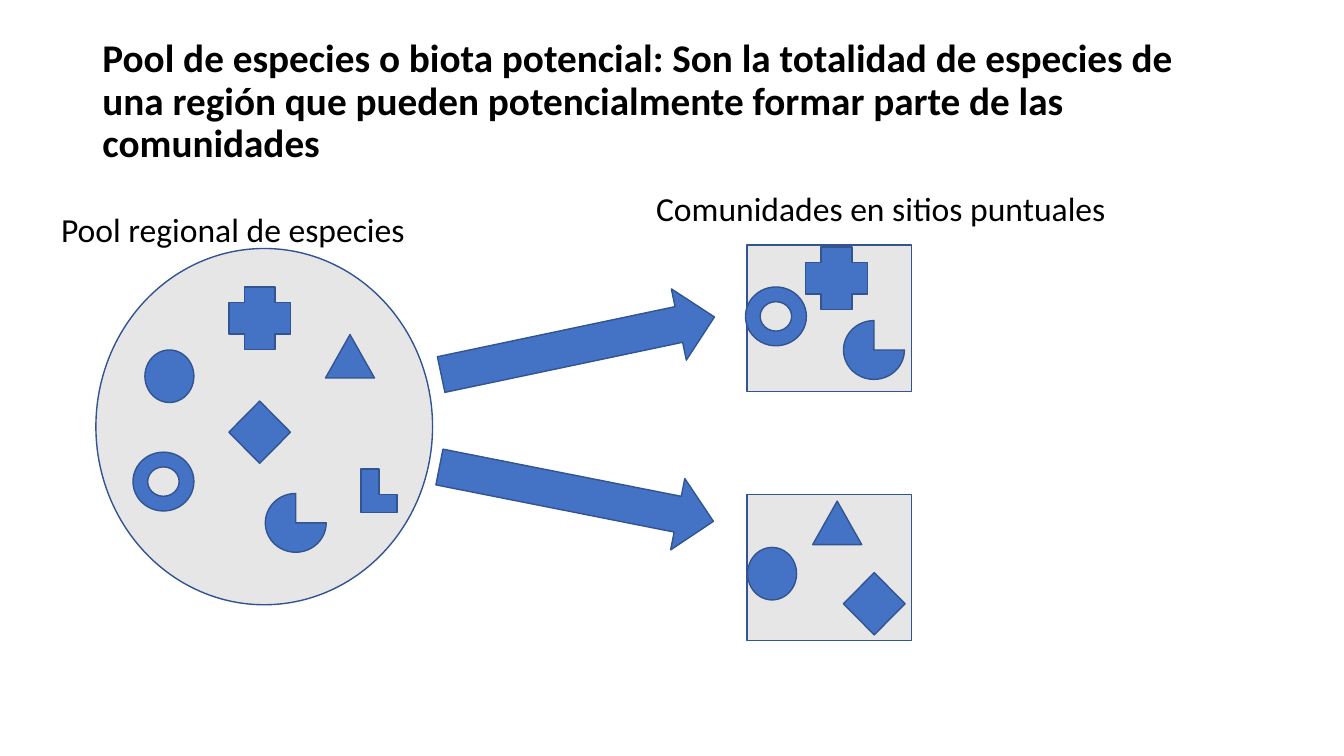
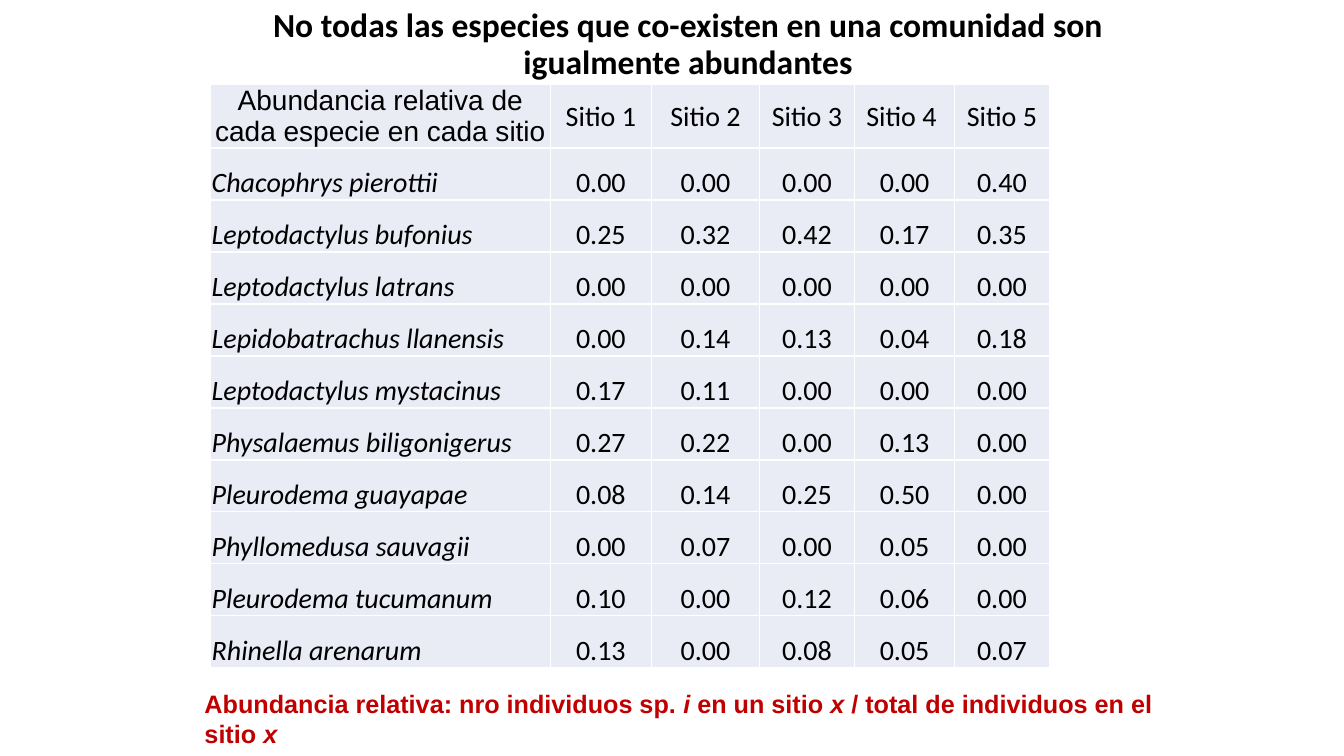
from dataclasses import dataclass
from typing import NamedTuple

from lxml.etree import SubElement
from pptx import Presentation
from pptx.dml.color import RGBColor
from pptx.enum.shapes import MSO_SHAPE
from pptx.enum.text import MSO_ANCHOR, MSO_AUTO_SIZE, PP_ALIGN
from pptx.oxml.ns import qn
from pptx.util import Pt


@dataclass(frozen=True)
class Theme:
    black: str = "000000"
    white: str = "FFFFFF"
    blue: str = "4472C4"
    outline: str = "325491"
    area: str = "E7E6E6"
    cell: str = "E9EBF5"
    red: str = "C00000"
    body_font: str = "Calibri"
    alt_font: str = "Arial"
    title: float = 28
    heading: float = 24
    table: float = 20
    caption: float = 18
    line: float = 1


THEME = Theme()


class Box(NamedTuple):
    left: float
    top: float
    width: float
    height: float


class Span(NamedTuple):
    text: str
    italic: bool = False


class Species(NamedTuple):
    kind: MSO_SHAPE
    left: float
    top: float


class Arrow(NamedTuple):
    box: Box
    rotation: float


class Label(NamedTuple):
    text: str
    box: Box


# Each species keeps one symbol and one size everywhere
SYMBOL_SIZES = {
    MSO_SHAPE.OVAL: (35, 37.5),
    MSO_SHAPE.ISOSCELES_TRIANGLE: (35, 31),
    MSO_SHAPE.PIE: (43.5, 42),
    MSO_SHAPE.CORNER: (25.5, 31),
    MSO_SHAPE.DONUT: (43.5, 42),
    MSO_SHAPE.CROSS: (44, 44.5),
    MSO_SHAPE.DIAMOND: (44, 44.5),
}

POOL = Box(68.5, 177.5, 240.5, 254.5)
SITES = [Box(533.5, top, 117.5, 104.5) for top in (175, 353)]

SPECIES = [
    # Regional pool
    Species(MSO_SHAPE.OVAL, 103.5, 250),
    Species(MSO_SHAPE.ISOSCELES_TRIANGLE, 232.5, 239),
    Species(MSO_SHAPE.PIE, 189.5, 352.5),
    Species(MSO_SHAPE.CORNER, 258, 335),
    Species(MSO_SHAPE.DONUT, 95, 323),
    Species(MSO_SHAPE.CROSS, 163.5, 205),
    Species(MSO_SHAPE.DIAMOND, 163.5, 286.5),
    # Upper site
    Species(MSO_SHAPE.PIE, 602.5, 229),
    Species(MSO_SHAPE.DONUT, 532.5, 205),
    Species(MSO_SHAPE.CROSS, 575.5, 176.5),
    # Lower site
    Species(MSO_SHAPE.OVAL, 534, 391),
    Species(MSO_SHAPE.DIAMOND, 602.5, 409),
    Species(MSO_SHAPE.ISOSCELES_TRIANGLE, 580.5, 358),
]

ARROWS = [
    Arrow(Box(313, 221, 199.5, 52), 348.1),
    Arrow(Box(312, 327, 199.5, 52), 11.2),
]

LABELS = [
    Label("Pool regional de especies", Box(36.5, 145.5, 262, 36)),
    Label("Comunidades en sitios puntuales", Box(461.5, 131, 339, 36)),
]

HEADER = ["Abundancia relativa de cada especie en cada sitio",
          "Sitio 1", "Sitio 2", "Sitio 3", "Sitio 4 ", "Sitio 5"]
ABUNDANCE = {
    "Chacophrys pierottii": (0, 0, 0, 0, 0.4),
    "Leptodactylus bufonius": (0.25, 0.32, 0.42, 0.17, 0.35),
    "Leptodactylus latrans": (0, 0, 0, 0, 0),
    "Lepidobatrachus llanensis": (0, 0.14, 0.13, 0.04, 0.18),
    "Leptodactylus mystacinus": (0.17, 0.11, 0, 0, 0),
    "Physalaemus biligonigerus": (0.27, 0.22, 0, 0.13, 0),
    "Pleurodema guayapae": (0.08, 0.14, 0.25, 0.5, 0),
    "Phyllomedusa sauvagii": (0, 0.07, 0, 0.05, 0),
    "Pleurodema tucumanum": (0.1, 0, 0.12, 0.06, 0),
    "Rhinella arenarum": (0.13, 0, 0.08, 0.05, 0.07),
}
COLUMN_WIDTHS = (242.5, 72.5, 77, 68, 71.5, 67.5)
HEADER_HEIGHT, ROW_HEIGHT = 45.7, 37.15
CELL_INSET = 0.7

CAPTION = [
    Span("Abundancia relativa: nro individuos sp. "),
    Span("i", italic=True),
    Span(" en un sitio "),
    Span("x ", italic=True),
    Span("/ total de individuos en el sitio "),
    Span("x", italic=True),
]


def points(box: Box) -> list[Pt]:
    return [Pt(v) for v in box]


def add_runs(p, spans: list[Span], size: float, font: str = THEME.body_font,
             color: str = THEME.black, bold: bool = False) -> None:
    for span in spans:
        r = p.add_run()
        r.text = span.text
        r.font.name = font
        r.font.size = Pt(size)
        r.font.bold = bold
        r.font.italic = span.italic
        r.font.color.rgb = RGBColor.from_string(color)


def add_title_slide(prs, text: str, box: Box, size: float, align: PP_ALIGN):
    s = prs.slides.add_slide(prs.slide_layouts[5])
    sp = s.shapes.title
    sp.left, sp.top, sp.width, sp.height = points(box)
    tf = sp.text_frame
    tf.auto_size = MSO_AUTO_SIZE.NONE
    tf.vertical_anchor = MSO_ANCHOR.MIDDLE
    p = tf.paragraphs[0]
    p.alignment = align
    p.line_spacing = 0.9
    add_runs(p, [Span(text)], size, bold=True)
    return s


def add_figure(s, kind: MSO_SHAPE, box: Box, fill: str = THEME.blue,
               rotation: float = 0) -> None:
    sp = s.shapes.add_shape(kind, *points(box))
    sp.shadow.inherit = False
    sp.rotation = rotation
    sp.fill.solid()
    sp.fill.fore_color.rgb = RGBColor.from_string(fill)
    sp.line.color.rgb = RGBColor.from_string(THEME.outline)
    sp.line.width = Pt(THEME.line)


def add_text(s, spans: list[Span], box: Box, size: float, wrap: bool, **style) -> None:
    tf = s.shapes.add_textbox(*points(box)).text_frame
    tf.word_wrap = wrap
    tf.auto_size = MSO_AUTO_SIZE.SHAPE_TO_FIT_TEXT
    add_runs(tf.paragraphs[0], spans, size, **style)


def style_cell(cell, anchor: MSO_ANCHOR) -> None:
    cell.vertical_anchor = anchor
    cell.margin_left = cell.margin_right = cell.margin_top = Pt(CELL_INSET)
    cell.margin_bottom = 0
    # Borders come before the fill in the cell properties
    tc_pr = cell._tc.get_or_add_tcPr()
    for side in ("a:lnL", "a:lnR", "a:lnT", "a:lnB"):
        ln = SubElement(tc_pr, qn(side), w=str(int(Pt(THEME.line))))
        SubElement(SubElement(ln, qn("a:solidFill")), qn("a:srgbClr"), val=THEME.white)
    cell.fill.solid()
    cell.fill.fore_color.rgb = RGBColor.from_string(THEME.cell)


def add_abundance_table(s, left: float, top: float) -> None:
    rows = [HEADER] + [[name, *(f"{v:.2f}" for v in values)]
                       for name, values in ABUNDANCE.items()]
    heights = [HEADER_HEIGHT] + [ROW_HEIGHT] * len(ABUNDANCE)
    box = Box(left, top, sum(COLUMN_WIDTHS), sum(heights))
    table = s.shapes.add_table(len(rows), len(HEADER), *points(box)).table
    table.first_row = table.horz_banding = False
    for column, width in zip(table.columns, COLUMN_WIDTHS):
        column.width = Pt(width)
    for i, (texts, height) in enumerate(zip(rows, heights)):
        table.rows[i].height = Pt(height)
        for j, text in enumerate(texts):
            is_name = i > 0 and j == 0
            cell = table.cell(i, j)
            style_cell(cell, MSO_ANCHOR.BOTTOM if i else MSO_ANCHOR.MIDDLE)
            p = cell.text_frame.paragraphs[0]
            p.alignment = PP_ALIGN.LEFT if is_name else PP_ALIGN.CENTER
            font = THEME.alt_font if i == j == 0 else THEME.body_font
            add_runs(p, [Span(text, italic=is_name)], THEME.table, font)


def build_pool_slide(prs) -> None:
    s = add_title_slide(
        prs, "Pool de especies o biota potencial: Son la totalidad de especies de una "
        "región que pueden potencialmente formar parte de las comunidades",
        Box(66, 21, 828, 104.5), THEME.title, PP_ALIGN.LEFT)
    # Areas, then the species inside them
    add_figure(s, MSO_SHAPE.OVAL, POOL, THEME.area)
    for site in SITES:
        add_figure(s, MSO_SHAPE.RECTANGLE, site, THEME.area)
    for kind, left, top in SPECIES:
        add_figure(s, kind, Box(left, top, *SYMBOL_SIZES[kind]))
    # Arrows from the pool to the sites
    for arrow in ARROWS:
        add_figure(s, MSO_SHAPE.RIGHT_ARROW, arrow.box, rotation=arrow.rotation)
    for label in LABELS:
        add_text(s, [Span(label.text)], label.box, THEME.heading, wrap=False)


def build_abundance_slide(prs) -> None:
    s = add_title_slide(
        prs, "No todas las especies que co-existen en una comunidad son "
        "igualmente abundantes",
        Box(150.5, -20, 682, 104.5), THEME.heading, PP_ALIGN.CENTER)
    add_abundance_table(s, 150.5, 60)
    add_text(s, CAPTION, Box(139, 488, 701, 51), THEME.caption, wrap=True,
             font=THEME.alt_font, color=THEME.red, bold=True)


def main() -> None:
    prs = Presentation()
    prs.slide_width, prs.slide_height = Pt(960), Pt(540)
    build_pool_slide(prs)
    build_abundance_slide(prs)
    prs.save("out.pptx")


if __name__ == "__main__":
    main()
